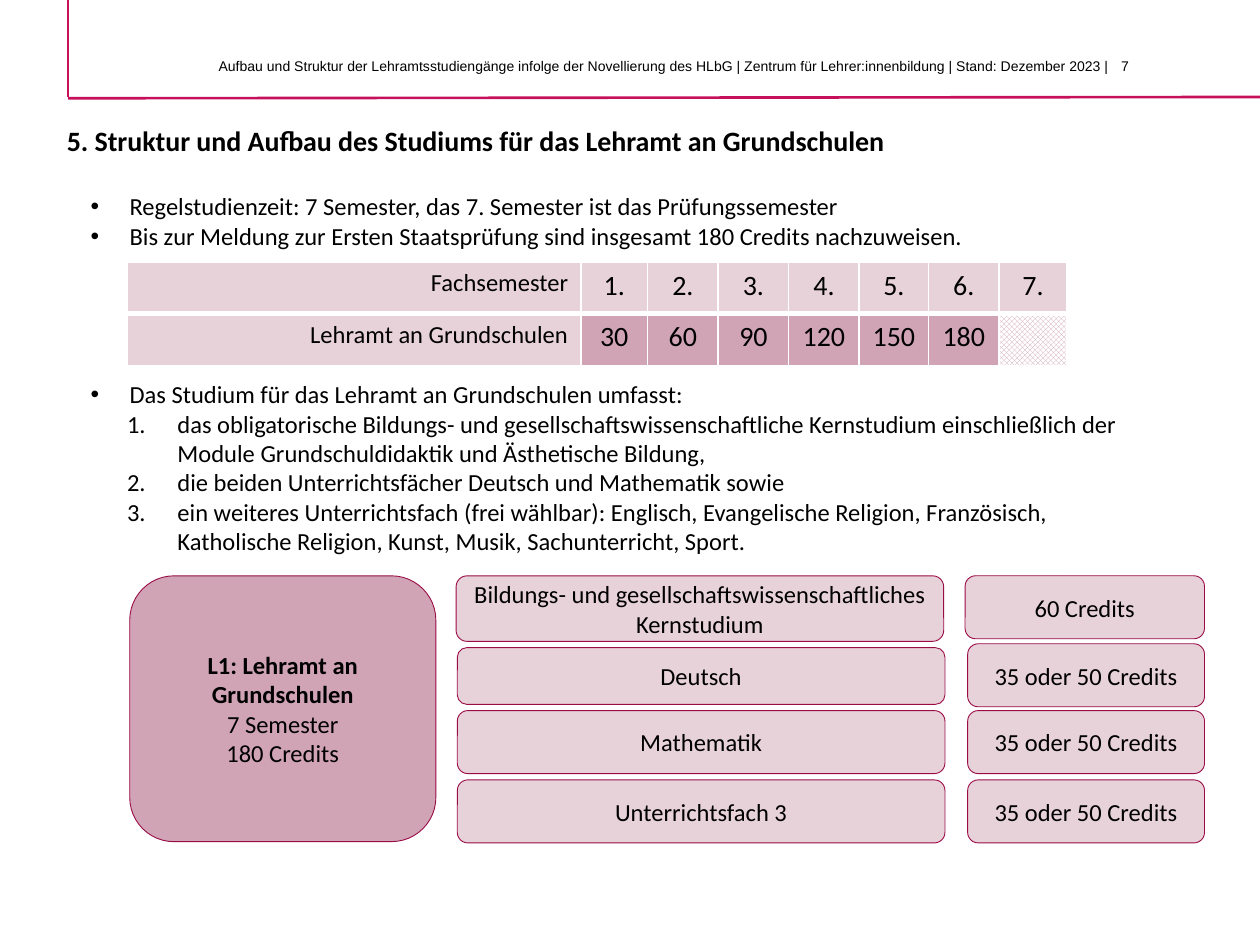
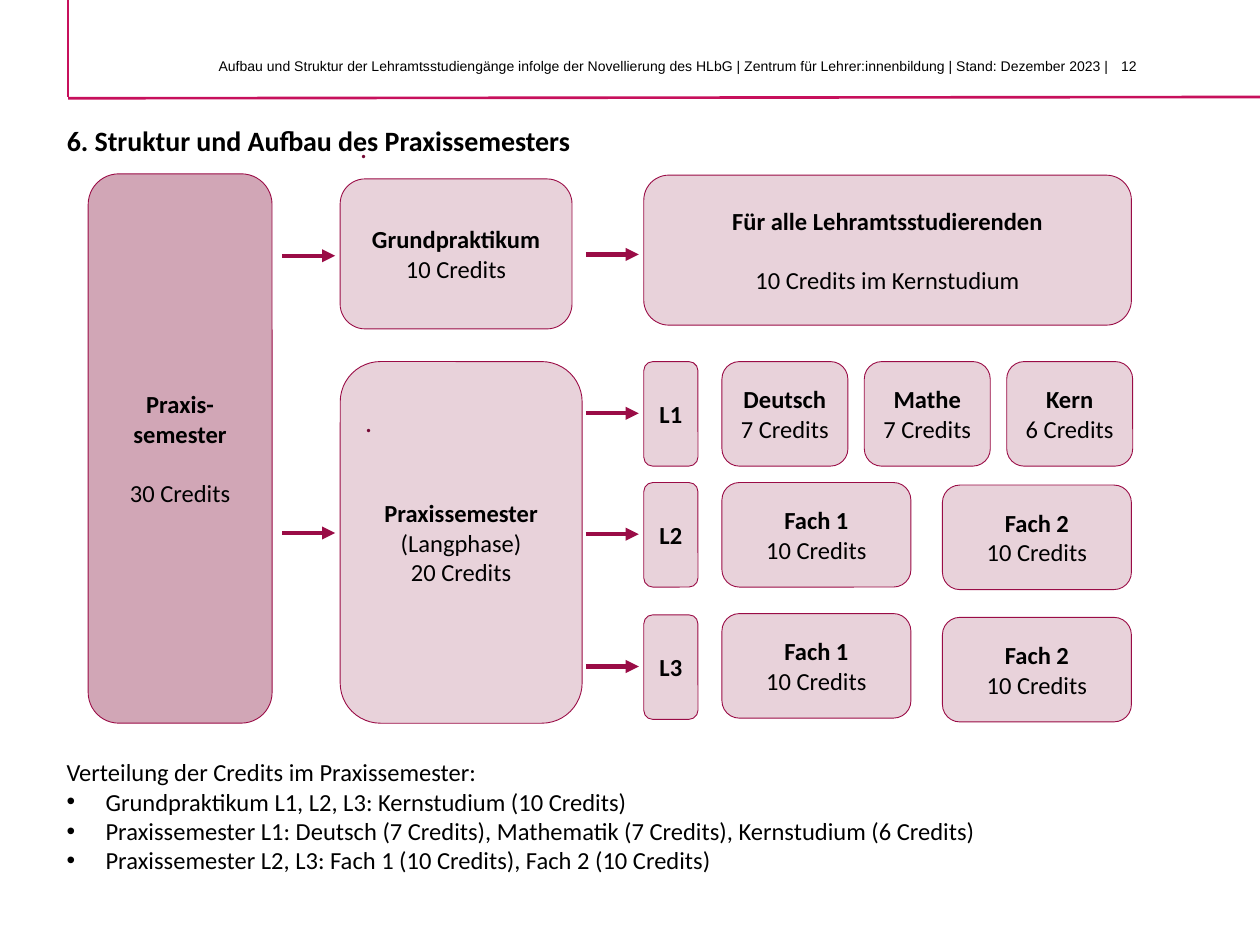
import pptx
import pptx.util
import pptx.dml.color
import pptx.enum.dml
import pptx.enum.shapes
import pptx.enum.text
import pptx.oxml
import pptx.oxml.ns
from lxml import etree

Inches, Pt = pptx.util.Inches, pptx.util.Pt
RGB = pptx.dml.color.RGBColor.from_string
ALIGN = pptx.enum.text.PP_ALIGN
ANCHOR = pptx.enum.text.MSO_ANCHOR
qn = pptx.oxml.ns.qn

COLORS = {"text": "000000", "white": "FFFFFF", "band": "C7105C", "edge": "9A0C46",
          "dark": "D0A4B4", "light": "E8D2DA", "dot": "740934"}
FONT, BAND_FONT = "Calibri", "Arial"
HEADER = ("Aufbau und Struktur der Lehramtsstudiengänge infolge der Novellierung des HLbG"
          " | Zentrum für Lehrer:innenbildung | Stand: Dezember 2023 |")


class Deck:
    def __init__(self):
        self.prs = pptx.Presentation()
        self.prs.slide_width, self.prs.slide_height = Inches(10), Inches(7.5)
        self.s = None

    # Slide frame: band, header, page number and title
    def slide(self, title, number):
        self.s = self.prs.slides.add_slide(self.prs.slide_layouts[5])
        self.line(0.54, 0, 0.54, 0.77, "band", 1.5)
        self.line(0.54, 0.78, 10, 0.77, "band", 1.5)
        self.text(1.31, 0.41, 7.6, 0.28, [HEADER], size=8, font=BAND_FONT, align=ALIGN.RIGHT)
        self.text(8.8, 0.41, 0.43, 0.28, [number], size=8, font=BAND_FONT)
        sp = self.s.shapes.title
        self.place(sp, 0.43, 0.93, 8.48, 0.37)
        tf = sp.text_frame
        tf.text = title
        tf.vertical_anchor = ANCHOR.TOP
        self.format(tf.paragraphs[0], 16, bold=True)

    def place(self, sp, x, y, w, h):
        sp.left, sp.top, sp.width, sp.height = (Inches(v) for v in (x, y, w, h))

    def format(self, p, size=14, bold=False, align=ALIGN.LEFT, font=FONT, color="text"):
        p.alignment = align
        for r in p.runs:
            r.font.name, r.font.size, r.font.bold = font, Pt(size), bold
            r.font.color.rgb = RGB(COLORS[color])

    def bullet(self, p, mark):
        left, hang = (0.69, 0.4) if mark == "1." else (0.31, 0.31)
        pPr = p._p.get_or_add_pPr()
        pPr.set("marL", str(Inches(left)))
        pPr.set("indent", str(-Inches(hang)))
        if mark == "1.":
            etree.SubElement(pPr, qn("a:buAutoNum"), type="arabicPeriod")
        else:
            etree.SubElement(pPr, qn("a:buFont"), typeface=BAND_FONT)
            etree.SubElement(pPr, qn("a:buChar"), char=mark)

    # Text box; an item is a plain string or (mark, string)
    def text(self, x, y, w, h, items, **style):
        tf = self.s.shapes.add_textbox(Inches(x), Inches(y), Inches(w), Inches(h)).text_frame
        tf.word_wrap = True
        for i, item in enumerate(items):
            p = tf.add_paragraph() if i else tf.paragraphs[0]
            mark, words = ("", item) if isinstance(item, str) else item
            if mark:
                self.bullet(p, mark)
            p.text = words
            self.format(p, **style)

    # Rounded box with centred lines; gap is the space before the last line
    def box(self, x, y, w, h, lines, fill="light", head=False, gap=0):
        sp = self.s.shapes.add_shape(pptx.enum.shapes.MSO_SHAPE.ROUNDED_RECTANGLE,
                                     Inches(x), Inches(y), Inches(w), Inches(h))
        sp.shadow.inherit = False
        sp.fill.solid()
        sp.fill.fore_color.rgb = RGB(COLORS[fill])
        sp.line.color.rgb = RGB(COLORS["edge"])
        sp.line.width = Pt(0.5)
        tf = sp.text_frame
        tf.word_wrap = True
        tf.vertical_anchor = ANCHOR.MIDDLE
        tf.margin_left = tf.margin_right = Inches(0.05)
        tf.text = "\n".join(lines)
        for i, p in enumerate(tf.paragraphs):
            self.format(p, bold=head and i == 0, align=ALIGN.CENTER)
        if gap:
            tf.paragraphs[-1].space_before = Pt(gap)
        return sp

    def line(self, x1, y1, x2, y2, color, width, arrow=False):
        c = self.s.shapes.add_connector(pptx.enum.shapes.MSO_CONNECTOR.STRAIGHT,
                                        Inches(x1), Inches(y1), Inches(x2), Inches(y2))
        c.line.color.rgb = RGB(COLORS[color])
        c.line.width = Pt(width)
        if arrow:
            etree.SubElement(c.line._get_or_add_ln(), qn("a:tailEnd"), type="triangle")
        etree.SubElement(c._element.spPr, qn("a:effectLst"))

    def arrow(self, x, y):
        self.line(x, y, x + 0.42, y, "edge", 2.5, arrow=True)

    def borders(self, cell, bottom):
        tcPr = cell._tc.get_or_add_tcPr()
        for i, (side, width) in enumerate((("L", 1), ("R", 1), ("T", 1), ("B", bottom))):
            ln = etree.Element(qn(f"a:ln{side}"), w=str(Pt(width)))
            fill = etree.SubElement(ln, qn("a:solidFill"))
            etree.SubElement(fill, qn("a:srgbClr"), val=COLORS["white"])
            tcPr.insert(i, ln)

    # Table with a label column and a thick rule under the first row
    def table(self, x, y, widths, height, rows):
        t = self.s.shapes.add_table(len(rows), len(widths), Inches(x), Inches(y),
                                    Inches(sum(widths)), Inches(height * len(rows))).table
        for col, w in zip(t.columns, widths):
            col.width = Inches(w)
        for i, row in enumerate(rows):
            t.rows[i].height = Inches(height)
            for j, words in enumerate(row):
                cell = t.cell(i, j)
                cell.text = words
                if j:
                    cell.margin_left = cell.margin_right = Inches(0.05)
                self.format(cell.text_frame.paragraphs[0], 16 if j else 14,
                            align=ALIGN.CENTER if j else ALIGN.RIGHT)
                if words:
                    cell.fill.solid()
                    cell.fill.fore_color.rgb = RGB(COLORS["dark" if i and j else "light"])
                else:
                    cell.fill.patterned()
                    cell.fill.pattern = pptx.enum.dml.MSO_PATTERN.TRELLIS
                    cell.fill.fore_color.rgb = RGB(COLORS["dark"])
                    cell.fill.back_color.rgb = RGB(COLORS["white"])
                self.borders(cell, 1 if i else 3)


def primary_school(d):
    d.slide("5. Struktur und Aufbau des Studiums für das Lehramt an Grundschulen", "7")
    d.text(0.62, 1.47, 8.55, 0.57, [
        ("•", "Regelstudienzeit: 7 Semester, das 7. Semester ist das Prüfungssemester"),
        ("•", "Bis zur Meldung zur Ersten Staatsprüfung sind insgesamt 180 Credits nachzuweisen.")])

    # Credits per semester
    semesters = range(1, 8)
    d.table(1.01, 2.08, [3.6, 0.53, 0.56, 0.56, 0.56, 0.55, 0.56, 0.54], 0.41, [
        ["Fachsemester"] + [f"{n}." for n in semesters],
        ["Lehramt an Grundschulen"] + [str(30 * n) if n < 7 else "" for n in semesters]])

    d.text(0.62, 2.96, 8.55, 1.51, [
        ("•", "Das Studium für das Lehramt an Grundschulen umfasst:"),
        ("1.", "das obligatorische Bildungs- und gesellschaftswissenschaftliche Kernstudium "
               "einschließlich der Module Grundschuldidaktik und Ästhetische Bildung,"),
        ("1.", "die beiden Unterrichtsfächer Deutsch und Mathematik sowie"),
        ("1.", "ein weiteres Unterrichtsfach (frei wählbar): Englisch, Evangelische Religion, "
               "Französisch, Katholische Religion, Kunst, Musik, Sachunterricht, Sport.")])

    # Degree, its parts and their credits
    d.box(1.03, 4.57, 2.43, 2.11, ["L1: Lehramt an Grundschulen", "7 Semester", "180 Credits"],
          "dark", head=True)
    d.box(3.62, 4.57, 3.87, 0.52, ["Bildungs- und gesellschaftswissenschaftliches Kernstudium"])
    d.box(7.66, 4.57, 1.9, 0.5, ["60 Credits"])
    for subject, y, h, credits_y in (("Deutsch", 5.14, 0.45, 5.11),
                                     ("Mathematik", 5.64, 0.5, 5.64),
                                     ("Unterrichtsfach 3", 6.19, 0.5, 6.19)):
        d.box(3.63, y, 3.87, h, [subject])
        d.box(7.68, credits_y, 1.88, 0.5, ["35 oder 50 Credits"])


def practical_semester(d):
    d.slide("6. Struktur und Aufbau des Praxissemesters", "12")

    # Semester and its two phases
    sp = d.box(0.7, 1.38, 1.46, 4.36, ["Praxis-semester", "30 Credits"], "dark",
               head=True, gap=17)
    color = sp._element.spPr.find(qn("a:solidFill")).find(qn("a:srgbClr"))
    etree.SubElement(color, qn("a:alpha"), val="97000")
    d.box(2.7, 1.42, 1.84, 1.19, ["Grundpraktikum", "10 Credits"], head=True)
    d.box(2.7, 2.87, 1.92, 2.87, ["Praxissemester", "(Langphase)", "20 Credits"], head=True)
    d.box(5.11, 1.39, 3.87, 1.19, ["Für alle Lehramtsstudierenden", "10 Credits im Kernstudium"],
          head=True, gap=17)
    for x, y in ((2.76, 0.99), (2.8, 3.16)):
        d.text(x, y, 0.3, 0.35, ["."], size=16, color="dot")

    for x, y in ((2.24, 2.03), (2.24, 4.23), (4.65, 2.02),
                 (4.65, 3.28), (4.65, 4.24), (4.65, 5.29)):
        d.arrow(x, y)

    # Degrees and the subjects that share the credits
    for degree, y in (("L1", 2.87), ("L2", 3.83), ("L3", 4.88)):
        d.box(5.11, y, 0.43, 0.83, [degree], head=True)
    for i, (subject, n) in enumerate((("Deutsch", 7), ("Mathe", 7), ("Kern", 6))):
        d.box(5.73 + 1.13 * i, 2.87, 1, 0.83, [subject, f"{n} Credits"], head=True)
    for subject, x, tops in (("Fach 1", 5.73, (3.83, 4.87)), ("Fach 2", 7.48, (3.85, 4.9))):
        for y in tops:
            d.box(x, y, 1.5, 0.83, [subject, "10 Credits"], head=True)

    d.text(0.43, 5.96, 7.56, 1.04, [
        "Verteilung der Credits im Praxissemester:",
        ("•", "Grundpraktikum L1, L2, L3: Kernstudium (10 Credits)"),
        ("•", "Praxissemester L1: Deutsch (7 Credits), Mathematik (7 Credits), "
              "Kernstudium (6 Credits)"),
        ("•", "Praxissemester L2, L3: Fach 1 (10 Credits), Fach 2 (10 Credits)")])


def main():
    d = Deck()
    primary_school(d)
    practical_semester(d)
    d.prs.save("out.pptx")


if __name__ == "__main__":
    main()
